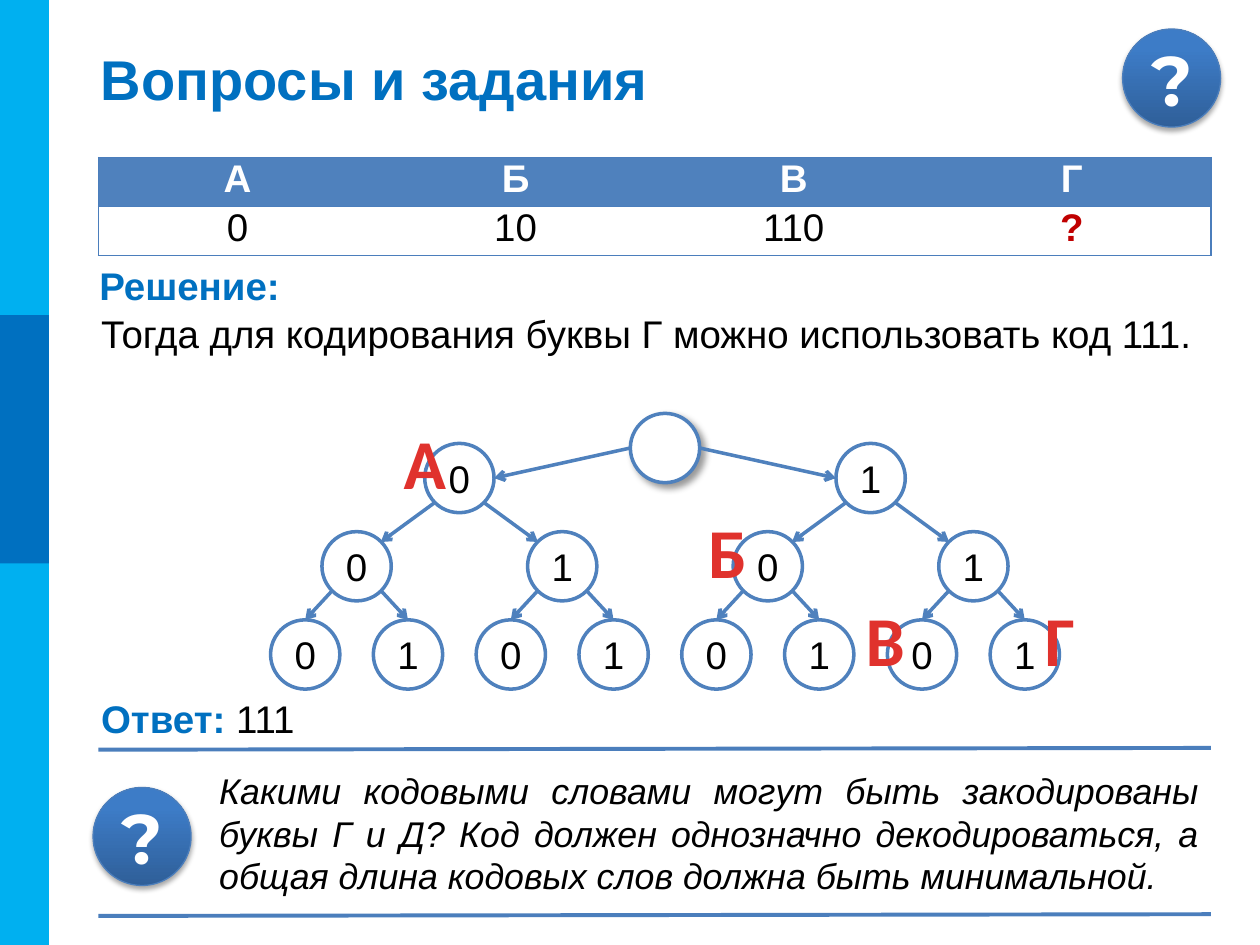
from lxml.etree import SubElement as Sub
from pptx import Presentation
from pptx.dml.color import RGBColor
from pptx.enum.shapes import MSO_CONNECTOR as Conn, MSO_SHAPE as Form
from pptx.enum.text import MSO_ANCHOR as Anchor, PP_ALIGN as Align
from pptx.oxml.ns import qn
from pptx.util import Pt

BLUE, EDGE, RIM = "0070C0", "4F81BD", "4B7EBC"
BLACK, WHITE, RED = "000000", "FFFFFF", "E0322D"


def tint(hue):
    """Turn a hex string into a colour."""
    return RGBColor.from_string(hue)


def write(para, text, size, hue, font="Arial", bold=False, slant=False):
    """Add one formatted run to a paragraph."""
    run = para.add_run()
    run.text = text
    face = run.font
    face.name, face.size, face.bold, face.italic = font, Pt(size), bold, slant
    face.color.rgb = tint(hue)
    return run


def label(slide, x, y, w, h, align=Align.LEFT, wrap=True):
    """Add a text box and return its first paragraph."""
    frame = slide.shapes.add_textbox(Pt(x), Pt(y), Pt(w), Pt(h)).text_frame
    frame.word_wrap = wrap
    para = frame.paragraphs[0]
    para.alignment = align
    return para


def shape(slide, form, x, y, w, h, fill, edge=None, width=2):
    """Add a flat preset shape."""
    item = slide.shapes.add_shape(form, Pt(x), Pt(y), Pt(w), Pt(h))
    item.shadow.inherit = False
    item.fill.solid()
    item.fill.fore_color.rgb = tint(fill)
    if edge:
        item.line.color.rgb = tint(edge)
        item.line.width = Pt(width)
    else:
        item.line.fill.background()
    return item


def shade(item, alpha, blur, dist, angle):
    """Give a shape a soft black shadow."""
    effect = item.element.spPr.find(qn("a:effectLst"))
    outer = Sub(effect, qn("a:outerShdw"), blurRad=str(Pt(blur)),
                dist=str(Pt(dist)), dir=str(angle * 60000), rotWithShape="0")
    black = Sub(outer, qn("a:srgbClr"), val=BLACK)
    Sub(black, qn("a:alpha"), val=str(alpha * 1000))


def centre(item, text, size, hue, font="Arial", bold=False):
    """Write centred text inside a shape."""
    frame = item.text_frame
    frame.vertical_anchor = Anchor.MIDDLE
    frame.margin_left = frame.margin_right = 0
    frame.margin_top = frame.margin_bottom = 0
    para = frame.paragraphs[0]
    para.alignment = Align.CENTER
    write(para, text, size, hue, font, bold)


def link(slide, start, end, hue, width, arrow=False):
    """Draw a straight line, with an arrowhead if asked."""
    x, y = start
    line = slide.shapes.add_connector(Conn.STRAIGHT, Pt(x), Pt(y), *map(Pt, end))
    line.line.color.rgb = tint(hue)
    line.line.width = Pt(width)
    props = line.element.spPr
    if arrow:
        Sub(props.find(qn("a:ln")), qn("a:tailEnd"), type="arrow")
    Sub(props, qn("a:effectLst"))


def side(slide, x, y, w, h):
    """Draw the colour strip at the left edge."""
    shape(slide, Form.RECTANGLE, x, y, w, h, "00B0F0")
    shape(slide, Form.RECTANGLE, x, y + h / 3, w, 142, BLUE)


def badge(slide, x, y, size):
    """Draw a round question badge."""
    item = shape(slide, Form.OVAL, x, y, size, size, EDGE, RIM, 0.75)
    item.fill.gradient()
    item.fill.gradient_angle = 90
    for stop, (hue, pos) in zip(item.fill.gradient_stops,
                                (("2F5F99", 0), ("3D7CC7", 0.8))):
        stop.color.rgb, stop.position = tint(hue), pos
    shade(item, 35, 3.1, 1.8, 90)
    centre(item, "?", 40, WHITE, "Montserrat", True)


def head(slide, x, y, w, h):
    """Place the title."""
    title = slide.shapes.title
    title.left, title.top, title.width, title.height = map(Pt, (x, y, w, h))
    frame = title.text_frame
    frame.vertical_anchor = Anchor.MIDDLE
    para = frame.paragraphs[0]
    para.alignment = Align.LEFT
    write(para, "Вопросы и задания", 32, BLUE, bold=True)


def codes(slide, x, y, w, h):
    """Build the table of letters and their codes."""
    rows = ("А", "Б", "В", "Г"), ("0", "10", "110", "?")
    table = slide.shapes.add_table(2, 4, Pt(x), Pt(y), Pt(w), Pt(h)).table
    table.first_row = table.horz_banding = False
    style = next(table._tbl.iter(qn("a:tableStyleId")))
    style.text = "{2D5ABB26-0587-4C30-8999-92F81FD0307C}"
    for r, row in enumerate(rows):
        for c, text in enumerate(row):
            cell = table.cell(r, c)
            cell.margin_top = cell.margin_bottom = 0
            props = cell._tc.get_or_add_tcPr()
            for tag, shown in (("lnL", c == 0), ("lnR", c == 3),
                               ("lnT", True), ("lnB", r == 1)):
                if shown:
                    edge = Sub(props, qn("a:" + tag), w=str(Pt(0.75)))
                    Sub(Sub(edge, qn("a:solidFill")), qn("a:srgbClr"), val=RIM)
            cell.fill.solid()
            cell.fill.fore_color.rgb = tint(WHITE if r else EDGE)
            para = cell.text_frame.paragraphs[0]
            para.alignment = Align.CENTER
            hue = "C00000" if text == "?" else BLACK if r else WHITE
            write(para, text, 22, hue, bold=not r or text == "?")


def proof(slide, x, y, w):
    """Write the solution and the answer."""
    write(label(slide, x, y, 158, 40), "Решение:", 22, BLUE, bold=True)
    para = label(slide, x + 1, y + 27.5, w, 62, Align.JUSTIFY)
    write(para, "Тогда для кодирования буквы Г можно использовать код 111.",
          22, BLACK)
    para = label(slide, x + 1, y + 247.5, 462, 40)
    write(para, "Ответ: ", 22, BLUE, bold=True)
    write(para, "111", 22, BLACK)


def tree(slide, x, y, w):
    """Draw the binary code tree with its marked letters."""
    size, step = 39.6, 50.4
    rad = size / 2
    span = (w - size) * 8 / 7
    ends = (((1, 0), (-1, 0)), ((0.7, 0.7), (-0.7, -0.7)), ((0.7, 0.7), (0, -1)))

    def spot(depth, i):
        """Find the centre of a node."""
        mid = x + w / 2 + (i - (2 ** depth - 1) / 2) * span / 2 ** depth
        top = y + 17.2 + (depth - 1) * step if depth else y
        return mid, top + rad

    for depth in range(4):
        for i in range(2 ** depth):
            cx, cy = spot(depth, i)
            node = shape(slide, Form.OVAL, cx - rad, cy - rad, size, size,
                         WHITE, EDGE)
            if depth:
                centre(node, str(i % 2), 22, BLACK)
                px, py = spot(depth - 1, i // 2)
                way = rad if i % 2 else -rad
                (ax, ay), (bx, by) = ends[depth - 1]
                link(slide, (px + ax * way, py + ay * rad),
                     (cx + bx * way, cy + by * rad), EDGE, 2, True)
            else:
                shade(node, 40, 4, 3, 45)
    for text, depth, i, shift in (("А", 1, 0, -20), ("Б", 2, 2, -23),
                                  ("В", 3, 6, -21), ("Г", 3, 7, 20)):
        cx, cy = spot(depth, i)
        para = label(slide, cx + shift - 19, cy - 36.8, 38, 55.4,
                     Align.CENTER, False)
        run = write(para, text, 40, RED, "Calibri", True)
        run.font._element.set("spc", "50")


def task(slide, x, y, w, h):
    """Place the closing question between two rules."""
    for top in (y, y + h):
        link(slide, (x, top), (x + w, top - 1), RIM, 2.25)
    badge(slide, x - 3, y + 21.6, 56)
    para = label(slide, x + 62, y + 7.2, w - 62, 84.2, Align.JUSTIFY)
    para.space_before = Pt(4)
    write(para, "Какими кодовыми словами могут быть закодированы буквы Г и Д? "
          "Код должен однозначно декодироваться, а общая длина кодовых слов "
          "должна быть минимальной.", 20.4, BLACK, slant=True)


def main():
    """Build and save the slide."""
    deck = Presentation()
    deck.slide_width, deck.slide_height = Pt(720), Pt(540)
    slide = deck.slides.add_slide(deck.slide_layouts[5])
    side(slide, 0, 0, 28, 540)
    badge(slide, 641.5, 16.6, 56)
    head(slide, 50.4, 21.6, 649.4, 46)
    codes(slide, 56.2, 90, 635.8, 56.2)
    proof(slide, 49.7, 146.2, 643)
    tree(slide, 154.6, 236.2, 450.8)
    task(slide, 56.2, 428.4, 635.8, 95)
    deck.save("out.pptx")


if __name__ == "__main__":
    main()
